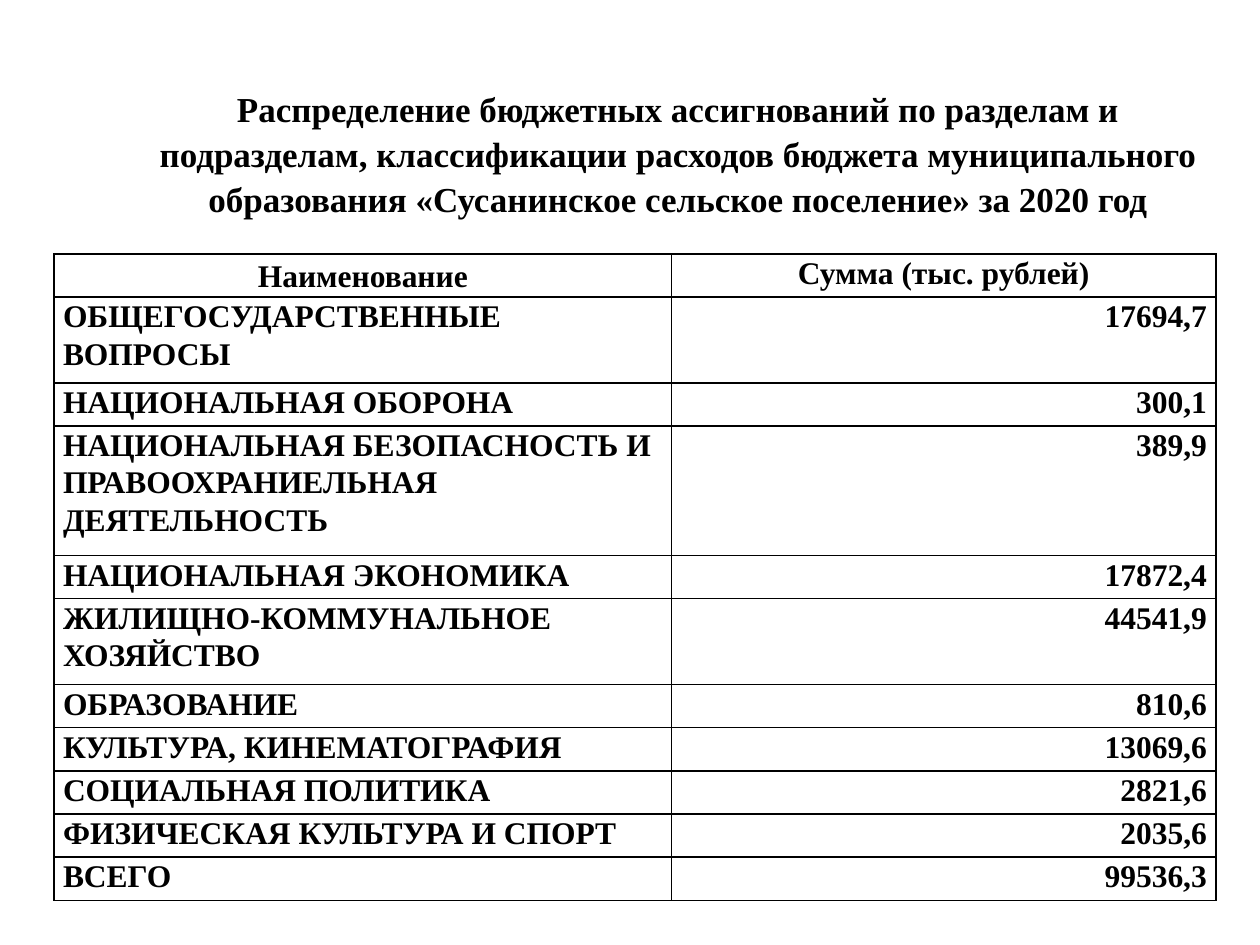
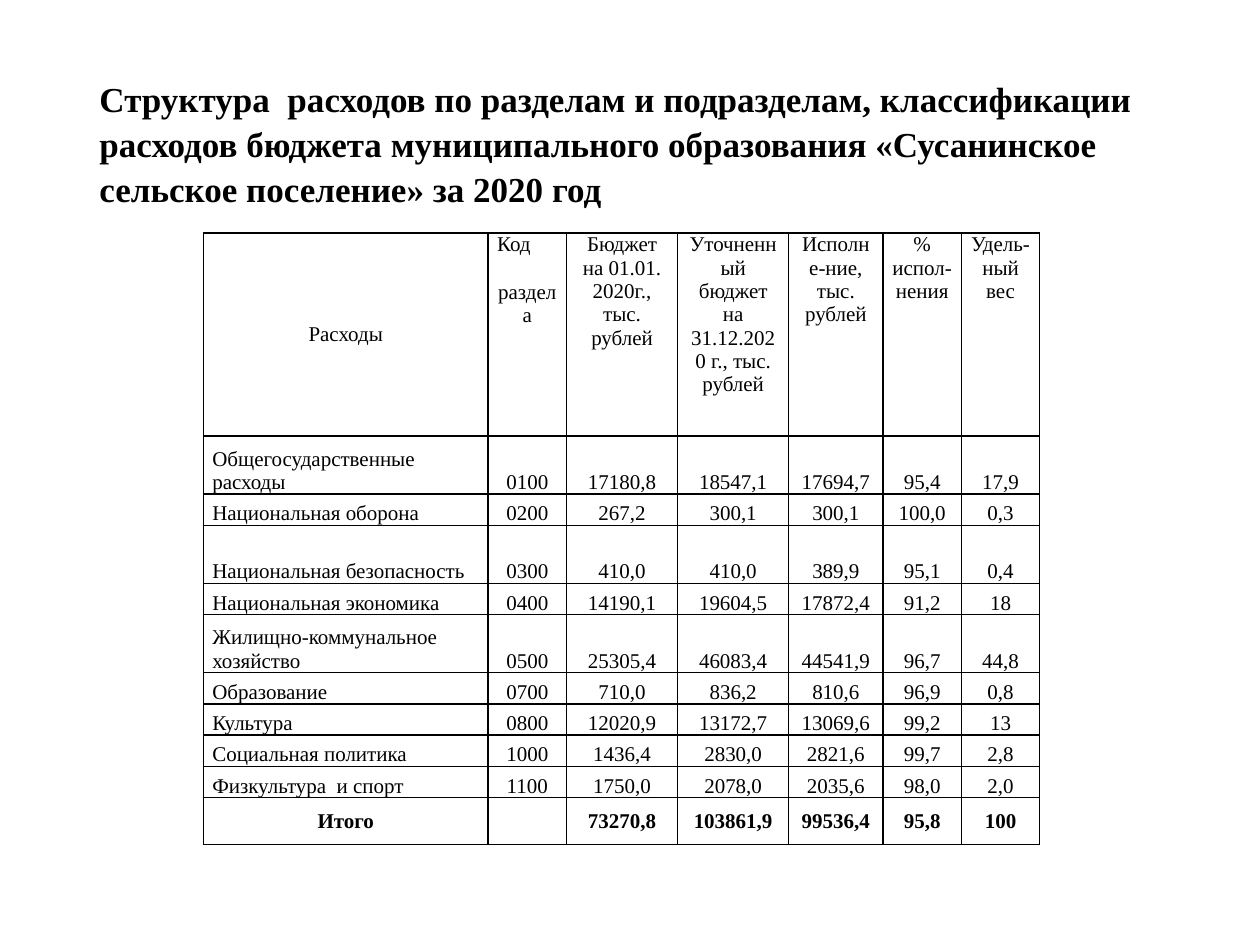
from dataclasses import dataclass

from lxml import etree
from pptx import Presentation
from pptx import util as u
from pptx.dml.color import RGBColor
from pptx.enum import text as t
from pptx.oxml import ns

COLORS = {"ink": "000000", "paper": "FFFFFF"}
FONT = "Times New Roman"
LEFT, CENTER, RIGHT = t.PP_ALIGN.LEFT, t.PP_ALIGN.CENTER, t.PP_ALIGN.RIGHT
TOP, MIDDLE, BOTTOM = t.MSO_ANCHOR.TOP, t.MSO_ANCHOR.MIDDLE, t.MSO_ANCHOR.BOTTOM
LINE_SPACING = 1.07
MUNICIPALITY = "муниципального образования «Сусанинское сельское поселение» за 2020 год"


@dataclass
class Heading:
    wording: str
    box: tuple[float, float, float, float]  # left, top, width, height in cm
    align: t.PP_ALIGN
    anchor: t.MSO_ANCHOR


@dataclass
class BudgetTable:
    left: float  # cm
    top: float
    columns: list[float]
    heights: list[float]
    rows: list[tuple[str, ...]]
    size: float
    figure_align: t.PP_ALIGN
    body_anchor: t.MSO_ANCHOR
    spacing: float = 1.0
    all_bold: bool = False
    centered_total: bool = False


# Slide 1: appropriations by section
APPROPRIATIONS_HEADING = Heading(
    "Распределение бюджетных ассигнований по разделам и подразделам, "
    f"классификации расходов бюджета {MUNICIPALITY}",
    (2.77, 1.57, 21.8, 3), CENTER, TOP)
ONE_LINE, TWO_LINES, THREE_LINES = 0.87, 1.73, 2.61
APPROPRIATIONS = BudgetTable(
    left=1.09, top=5.12, columns=[12.45, 10.97],
    heights=[ONE_LINE, TWO_LINES, ONE_LINE, THREE_LINES, ONE_LINE, TWO_LINES]
    + [ONE_LINE] * 5,
    rows=[
        ("Наименование", "Сумма (тыс. рублей)"),
        ("ОБЩЕГОСУДАРСТВЕННЫЕ ВОПРОСЫ", "17694,7"),
        ("НАЦИОНАЛЬНАЯ ОБОРОНА", "300,1"),
        ("НАЦИОНАЛЬНАЯ БЕЗОПАСНОСТЬ И ПРАВООХРАНИЕЛЬНАЯ ДЕЯТЕЛЬНОСТЬ", "389,9"),
        ("НАЦИОНАЛЬНАЯ ЭКОНОМИКА", "17872,4"),
        ("ЖИЛИЩНО-КОММУНАЛЬНОЕ ХОЗЯЙСТВО", "44541,9"),
        ("ОБРАЗОВАНИЕ", "810,6"),
        ("КУЛЬТУРА, КИНЕМАТОГРАФИЯ", "13069,6"),
        ("СОЦИАЛЬНАЯ ПОЛИТИКА", "2821,6"),
        ("ФИЗИЧЕСКАЯ КУЛЬТУРА И СПОРТ", "2035,6"),
        ("ВСЕГО", "99536,3"),
    ],
    size=18, figure_align=RIGHT, body_anchor=TOP,
    spacing=LINE_SPACING, all_bold=True)

# Slide 2: structure of spending
STRUCTURE_HEADING = Heading(
    "Структура  расходов по разделам и подразделам, "
    f"классификации расходов бюджета {MUNICIPALITY}",
    (1.75, 1.02, 21.9, 3.68), LEFT, MIDDLE)
SHORT, TALL = 0.63, 1.17
STRUCTURE = BudgetTable(
    left=4.1, top=4.7, columns=[5.74, 1.58, 2.24, 2.24, 1.9, 1.58, 1.58],
    heights=[4.09, TALL, SHORT, TALL, SHORT, TALL] + [SHORT] * 4 + [0.94],
    rows=[
        ("Расходы", "Код\nраздела", "Бюджет на 01.01.\n2020г., тыс. рублей",
         "Уточненный бюджет на 31.12.2020 г., тыс. рублей",
         "Исполне-ние, тыс. рублей", "% испол-нения", "Удель-ный вес"),
        ("Общегосударственные расходы", "0100", "17180,8", "18547,1", "17694,7", "95,4", "17,9"),
        ("Национальная оборона", "0200", "267,2", "300,1", "300,1", "100,0", "0,3"),
        ("Национальная безопасность", "0300", "410,0", "410,0", "389,9", "95,1", "0,4"),
        ("Национальная экономика", "0400", "14190,1", "19604,5", "17872,4", "91,2", "18"),
        ("Жилищно-коммунальное хозяйство", "0500", "25305,4", "46083,4", "44541,9", "96,7", "44,8"),
        ("Образование", "0700", "710,0", "836,2", "810,6", "96,9", "0,8"),
        ("Культура", "0800", "12020,9", "13172,7", "13069,6", "99,2", "13"),
        ("Социальная политика", "1000", "1436,4", "2830,0", "2821,6", "99,7", "2,8"),
        ("Физкультура  и спорт", "1100", "1750,0", "2078,0", "2035,6", "98,0", "2,0"),
        ("Итого", "", "73270,8", "103861,9", "99536,4", "95,8", "100"),
    ],
    size=12, figure_align=CENTER, body_anchor=BOTTOM, centered_total=True)


def write(frame, wording: str, *, size: float, bold: bool = False,
          align: t.PP_ALIGN = LEFT, spacing: float = 1.0, after: float = 0) -> None:
    """Fill a text frame, one paragraph per line of wording."""
    frame.text = wording
    for paragraph in frame.paragraphs:
        paragraph.alignment = align
        paragraph.line_spacing = spacing
        paragraph.space_before = u.Pt(0)
        paragraph.space_after = u.Pt(after)
        paragraph.font.size = u.Pt(size)
        for run in paragraph.runs:
            run.font.name = FONT
            run.font.size = u.Pt(size)
            run.font.bold = bold
            run.font.color.rgb = RGBColor.from_string(COLORS["ink"])


def add_heading(slide, heading: Heading) -> None:
    title = slide.shapes.title
    title.left, title.top, title.width, title.height = map(u.Cm, heading.box)
    frame = title.text_frame
    frame.word_wrap = True
    frame.auto_size = t.MSO_AUTO_SIZE.NONE
    frame.vertical_anchor = heading.anchor
    write(frame, heading.wording, size=20, bold=True, align=heading.align,
          spacing=LINE_SPACING, after=8)


def add_borders(cell) -> None:
    """Draw a thin line on all four sides; the lines come before the fill."""
    properties = cell._tc.get_or_add_tcPr()
    for position, side in enumerate(("lnL", "lnR", "lnT", "lnB")):
        line = etree.Element(ns.qn(f"a:{side}"), w=str(u.Pt(1)))
        fill = etree.SubElement(line, ns.qn("a:solidFill"))
        etree.SubElement(fill, ns.qn("a:srgbClr"), val=COLORS["ink"])
        properties.insert(position, line)


def add_budget_table(slide, budget: BudgetTable):
    table = slide.shapes.add_table(
        len(budget.rows), len(budget.columns), u.Cm(budget.left), u.Cm(budget.top),
        u.Cm(sum(budget.columns)), u.Cm(sum(budget.heights))).table
    table.first_row = table.horz_banding = False
    for column, width in zip(table.columns, budget.columns):
        column.width = u.Cm(width)
    for row, height in zip(table.rows, budget.heights):
        row.height = u.Cm(height)

    last = len(budget.rows) - 1
    for r, entries in enumerate(budget.rows):
        is_header = r == 0
        is_total = budget.centered_total and r == last
        for c, entry in enumerate(entries):
            cell = table.cell(r, c)
            cell.margin_left = cell.margin_right = u.Cm(0.18)
            cell.margin_top = cell.margin_bottom = 0
            cell.fill.solid()
            cell.fill.fore_color.rgb = RGBColor.from_string(COLORS["paper"])
            add_borders(cell)
            if is_total or (is_header and c == 0):
                cell.vertical_anchor = MIDDLE
            else:
                cell.vertical_anchor = TOP if is_header else budget.body_anchor
            if is_header or is_total:
                align = CENTER
            else:
                align = LEFT if c == 0 else budget.figure_align
            write(cell.text_frame, entry, size=budget.size, align=align,
                  bold=budget.all_bold or is_total, spacing=budget.spacing)
    return table


def main() -> None:
    deck = Presentation()
    deck.slide_width, deck.slide_height = u.Cm(25.4), u.Cm(19.05)
    title_only = deck.slide_layouts[5]

    appropriations = deck.slides.add_slide(title_only)
    add_heading(appropriations, APPROPRIATIONS_HEADING)
    add_budget_table(appropriations, APPROPRIATIONS)

    structure = deck.slides.add_slide(title_only)
    add_heading(structure, STRUCTURE_HEADING)
    table = add_budget_table(structure, STRUCTURE)

    # The section code header keeps an open line between its two words
    code, section = table.cell(0, 1).text_frame.paragraphs
    code.alignment = LEFT
    section.space_before = u.Pt(STRUCTURE.size * 1.15)

    deck.save("out.pptx")


if __name__ == "__main__":
    main()
